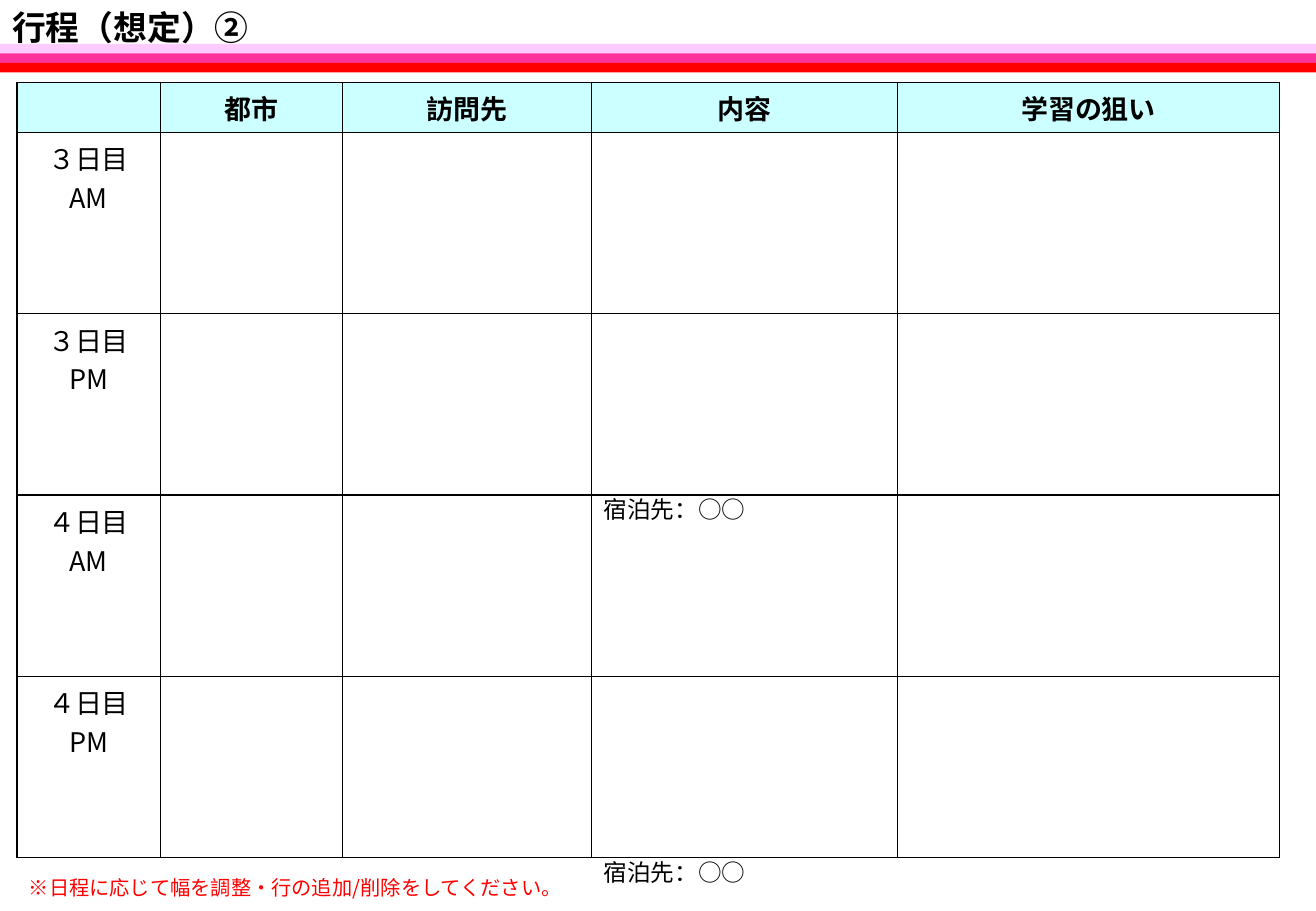
from lxml.etree import SubElement
from pptx import Presentation
from pptx.dml.color import RGBColor
from pptx.enum.shapes import MSO_SHAPE
from pptx.enum.text import MSO_ANCHOR, MSO_AUTO_SIZE, PP_ALIGN
from pptx.oxml.ns import qn
from pptx.util import Pt

FONT = "Noto Sans CJK JP"
BLACK = RGBColor(0x00, 0x00, 0x00)
RED = RGBColor(0xFF, 0x00, 0x00)
PINK = RGBColor(0xFF, 0x33, 0x99)
PALE_PINK = RGBColor(0xFF, 0xCC, 0xFF)
PALE_CYAN = RGBColor(0xCC, 0xFF, 0xFF)

HEADINGS = ["", "都市", "訪問先", "内容", "学習の狙い"]
LODGING = "宿泊先：○○"
SESSIONS = [
    ("３日目\nAM", ""),
    ("３日目\nPM", LODGING),
    ("４日目\nAM", ""),
    ("４日目\nPM", LODGING),
]
COLUMN_WIDTHS = [85, 108, 147.5, 181.5, 226.5]
HEADER_HEIGHT, SESSION_HEIGHT = 29.5, 107.5


def write(text_frame, text, size, color=BLACK, bold=False, align=PP_ALIGN.LEFT):
    text_frame.text = text
    for paragraph in text_frame.paragraphs:
        paragraph.alignment = align
        for run in paragraph.runs:
            run.font.size = Pt(size)
            run.font.bold = bold
            run.font.color.rgb = color
            run.font.name = FONT
            SubElement(run.font._element, qn("a:ea"), typeface=FONT)


def add_title(slide, left, top, width, height):
    title = slide.shapes.title
    title.left, title.top, title.width, title.height = map(Pt, (left, top, width, height))
    text_frame = title.text_frame
    text_frame.auto_size = MSO_AUTO_SIZE.NONE
    text_frame.vertical_anchor = MSO_ANCHOR.MIDDLE
    text_frame.margin_top = text_frame.margin_bottom = 0
    write(text_frame, "行程（想定）②", 20, bold=True)


def add_bands(slide, left, top, width, height):
    colors = [PALE_PINK, PINK, RED]
    band_height = height / len(colors)
    for index, color in enumerate(colors):
        band = slide.shapes.add_shape(
            MSO_SHAPE.RECTANGLE, Pt(left), Pt(top + index * band_height),
            Pt(width), Pt(band_height))
        band.shadow.inherit = False
        band.fill.solid()
        band.fill.fore_color.rgb = color
        band.line.fill.background()


def add_borders(cell):
    properties = cell._tc.get_or_add_tcPr()
    for side in ("a:lnL", "a:lnR", "a:lnT", "a:lnB"):
        line = SubElement(properties, qn(side), w=str(Pt(1)))
        fill = SubElement(line, qn("a:solidFill"))
        SubElement(fill, qn("a:srgbClr"), val=str(BLACK))


def add_itinerary(slide, left, top):
    height = HEADER_HEIGHT + SESSION_HEIGHT * len(SESSIONS)
    table = slide.shapes.add_table(
        len(SESSIONS) + 1, len(HEADINGS), Pt(left), Pt(top),
        Pt(sum(COLUMN_WIDTHS)), Pt(height)).table
    table.first_row = table.horz_banding = False
    for column, width in zip(table.columns, COLUMN_WIDTHS):
        column.width = Pt(width)
    for index, row in enumerate(table.rows):
        row.height = Pt(SESSION_HEIGHT if index else HEADER_HEIGHT)
        for cell in row.cells:
            add_borders(cell)
            cell.fill.background()

    # Header row
    for cell, heading in zip(table.rows[0].cells, HEADINGS):
        cell.fill.solid()
        cell.fill.fore_color.rgb = PALE_CYAN
        cell.margin_bottom = 0
        if heading:
            write(cell.text_frame, heading, 16, bold=True, align=PP_ALIGN.CENTER)

    # Sessions, with the lodging line hanging from the foot of the cell
    for index, (session, lodging) in enumerate(SESSIONS, start=1):
        write(table.cell(index, 0).text_frame, session, 16, align=PP_ALIGN.CENTER)
        if lodging:
            content = table.cell(index, 3)
            content.vertical_anchor = MSO_ANCHOR.BOTTOM
            content.margin_bottom = Pt(-18)
            write(content.text_frame, lodging, 14)


def add_note(slide, left, top, width, height):
    note = slide.shapes.add_textbox(Pt(left), Pt(top), Pt(width), Pt(height))
    note.text_frame.word_wrap = True
    write(note.text_frame, "※日程に応じて幅を調整・行の追加/削除をしてください。", 12, RED)


def main():
    presentation = Presentation()
    presentation.slide_width, presentation.slide_height = Pt(780), Pt(540)
    slide = presentation.slides.add_slide(presentation.slide_layouts[5])
    add_bands(slide, 0, 26, 780, 17)
    add_title(slide, 0, 0, 702, 31.5)
    add_itinerary(slide, 10, 49)
    add_note(slide, 10, 515.5, 448, 21.5)
    presentation.save("out.pptx")


if __name__ == "__main__":
    main()
